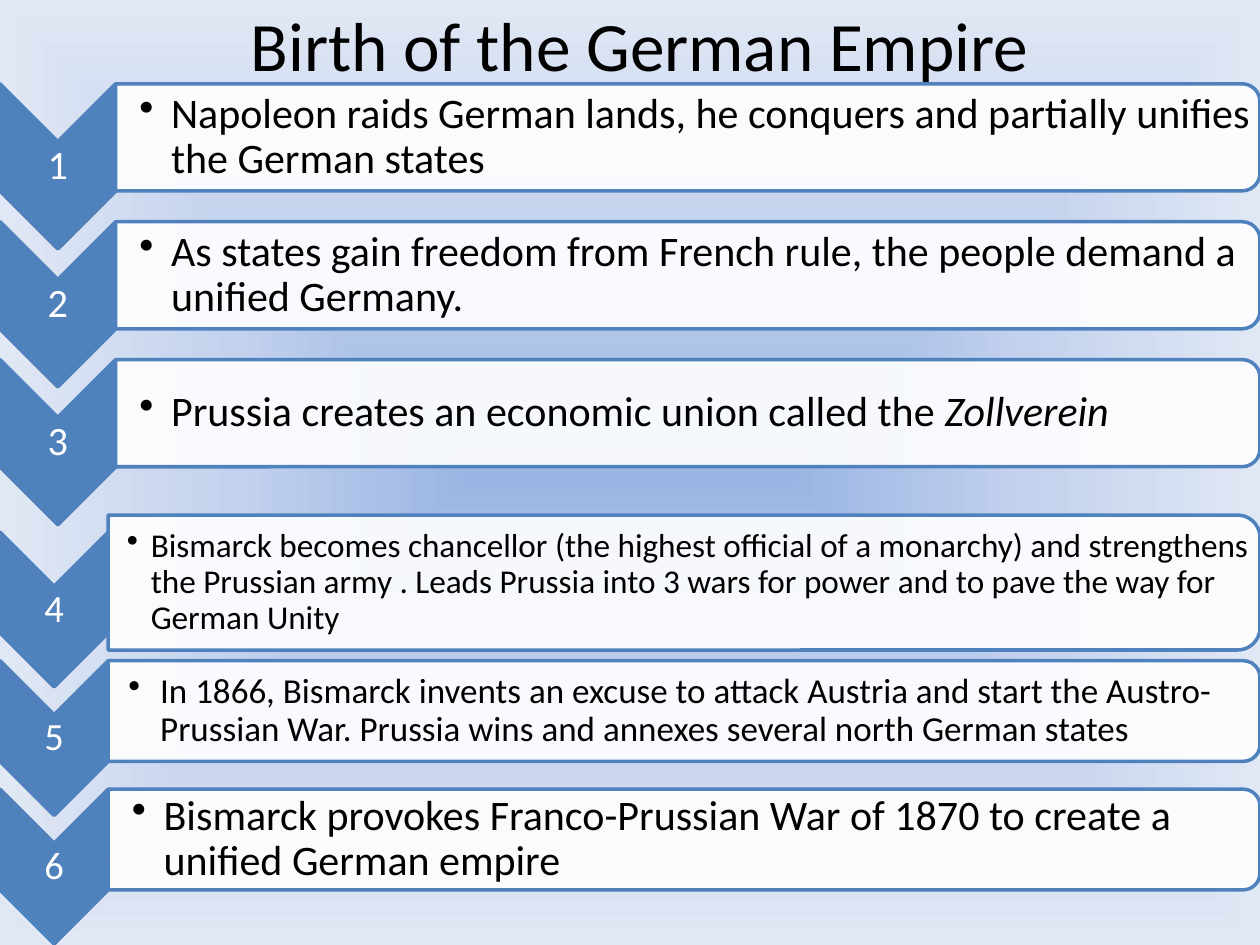
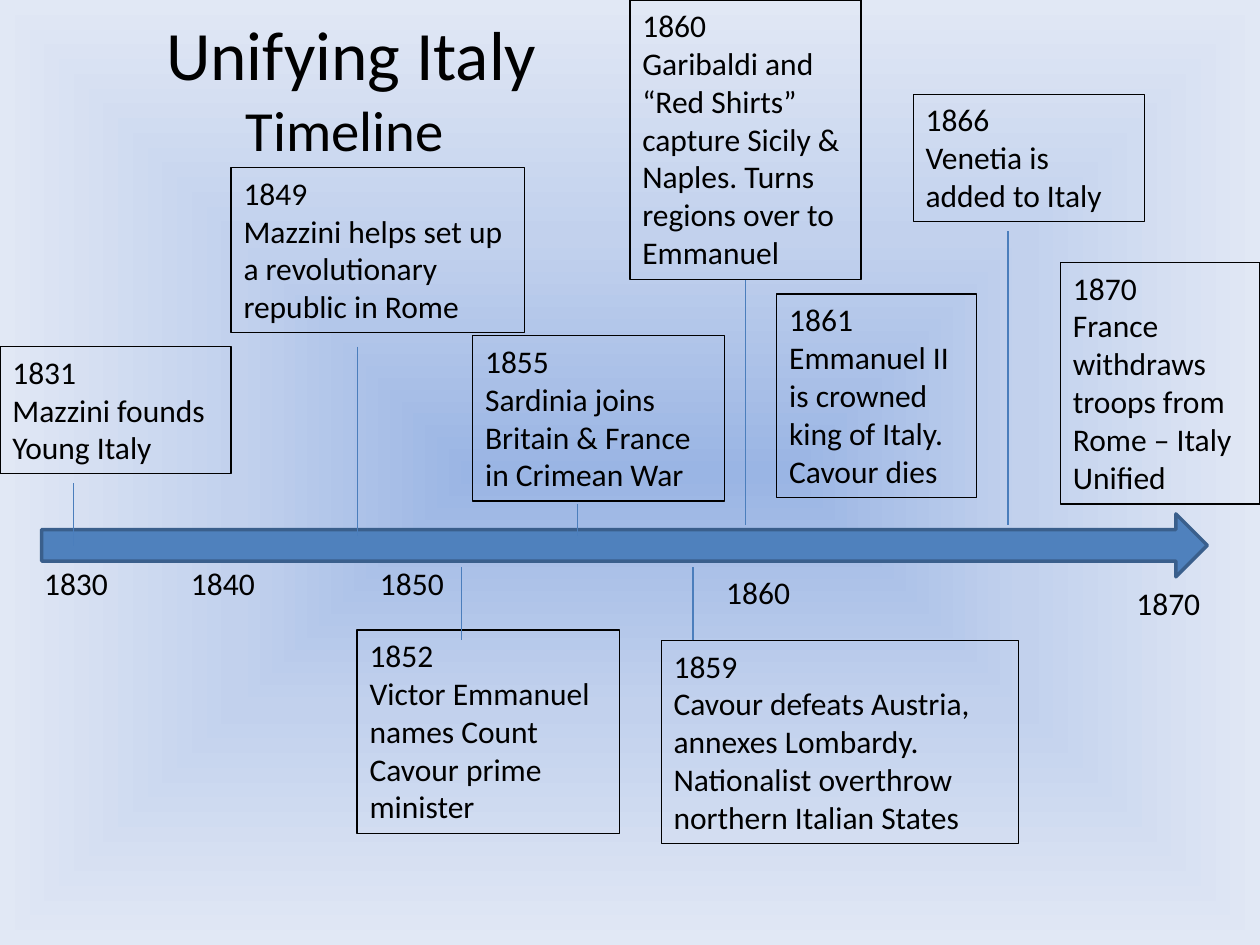
from dataclasses import dataclass
from typing import NamedTuple

from lxml.etree import SubElement
from pptx import Presentation
from pptx.dml.color import RGBColor
from pptx.enum.shapes import MSO_CONNECTOR, MSO_SHAPE
from pptx.enum.text import MSO_ANCHOR, PP_ALIGN
from pptx.oxml import parse_xml
from pptx.oxml.ns import nsdecls, qn
from pptx.util import Cm, Pt


@dataclass(frozen=True)
class Theme:
    font: str = "Calibri"
    ink: str = "000000"
    paper: str = "FFFFFF"
    blue: str = "4F81BD"
    edge: str = "3A5F8C"
    link: str = "4B7EBC"
    glow: tuple = ((0, "9AB5E4"), (50, "C2D1ED"), (100, "E1E8F5"))
    title: float = 39.6
    subtitle: float = 32.4
    body: float = 18
    thick: float = 2
    thin: float = 0.75


THEME = Theme()


class Box(NamedTuple):
    """A place on the slide, in centimetres."""
    left: float
    top: float
    width: float
    height: float

    def size(self) -> tuple:
        return tuple(Cm(n) for n in self)

    def turned(self) -> "Box":
        """The frame that covers this box after a quarter turn."""
        shift = (self.width - self.height) / 2
        return Box(self.left + shift, self.top - shift, self.height, self.width)


class Step(NamedTuple):
    text: str
    size: float = 24
    inset: float = 0.48
    indent: float = 0.64
    extra: float = 0  # height added to the panel
    accent: str = ""  # closing words in italics


class Stack(NamedTuple):
    """A column of chevrons, each with a panel to its right."""
    first: int
    top: float
    pitch: float
    width: float
    height: float
    panel: float
    digit: float
    steps: tuple


class Card(NamedTuple):
    year: str
    text: str
    left: float
    top: float
    width: float
    lines: int


class Stem(NamedTuple):
    left: float
    start: float
    end: float
    card: str = ""  # year of the card it hangs from


class Mark(NamedTuple):
    year: str
    left: float
    top: float


STACKS = (
    Stack(1, 1.69, 2.78, 2.33, 3.33, 2.16, 23, (
        Step("Napoleon raids German lands, he conquers and partially unifies "
             "the German states"),
        Step("As states gain freedom from French rule, the people demand a "
             "unified Germany."),
        Step("Prussia creates an economic union called the ",
             accent="Zollverein"),
    )),
    Stack(4, 10.73, 2.59, 2.18, 3.12, 2.03, 22, (
        Step("Bismarck becomes chancellor (the highest official of a monarchy) "
             "and strengthens the Prussian army . Leads Prussia into 3 wars "
             "for power and to pave the way for German Unity",
             19, 0.38, 0.48, 0.69),
        Step("In 1866, Bismarck invents an excuse to attack Austria and start "
             "the Austro-Prussian War. Prussia wins and annexes several north "
             "German states", 20, 0.41),
        Step("Bismarck provokes Franco-Prussian War of 1870 to create a "
             "unified German empire"),
    )),
)

CARDS = (
    Card("1831", "Mazzini founds Young Italy", 0, 6.99, 4.66, 3),
    Card("1849", "Mazzini helps set up a revolutionary republic in Rome",
         4.66, 3.38, 5.92, 4),
    Card("1852", "Victor Emmanuel names Count Cavour prime minister",
         7.2, 12.7, 5.29, 5),
    Card("1855", "Sardinia joins Britain & France in Crimean War",
         9.53, 6.77, 5.08, 4),
    Card("1859", "Cavour defeats Austria, annexes Lombardy. Nationalist "
         "overthrow northern Italian States", 13.33, 12.91, 7.2, 5),
    Card("1860", "Garibaldi and “Red Shirts” capture Sicily & Naples. Turns "
         "regions over to Emmanuel", 12.7, 0, 4.66, 7),
    Card("1861", "Emmanuel II is crowned king of Italy. Cavour dies",
         15.66, 5.93, 4.02, 5),
    Card("1866", "Venetia is added to Italy", 18.41, 1.9, 4.66, 3),
    Card("1870", "France withdraws troops from Rome – Italy Unified",
         21.38, 5.29, 4.02, 6),
)

STEMS = (
    Stem(1.48, 9.74, 11.01),
    Stem(7.2, 6.99, 10.8),
    Stem(9.31, 11.43, 12.91),
    Stem(11.64, 10.16, 10.8),
    Stem(13.97, 12.91, 11.43),
    Stem(15.03, 5.64, 10.58, "1860"),
    Stem(20.32, 4.66, 10.58),
)

MARKS = (
    Mark("1830", 0.64, 11.24),
    Mark("1840", 3.6, 11.24),
    Mark("1850", 7.41, 11.24),
    Mark("1860", 14.39, 11.43),
    Mark("1870", 22.66, 11.64),
)


def rgb(color: str) -> RGBColor:
    return RGBColor.from_string(color)


def add_page(deck):
    """Add a blank slide with the glowing background."""
    page = deck.slides.add_slide(deck.slide_layouts[6])
    stops = "".join(f'<a:gs pos="{at * 1000}"><a:srgbClr val="{color}"/></a:gs>'
                    for at, color in THEME.glow)
    page.element.cSld.insert(0, parse_xml(
        f'<p:bg {nsdecls("p", "a")}><p:bgPr><a:gradFill rotWithShape="1">'
        f'<a:gsLst>{stops}</a:gsLst><a:path path="shape">'
        '<a:fillToRect l="50000" t="50000" r="50000" b="50000"/></a:path>'
        '</a:gradFill><a:effectLst/></p:bgPr></p:bg>'))
    return page


def style(frame, size: float, color: str = THEME.ink, align=PP_ALIGN.LEFT) -> None:
    for para in frame.paragraphs:
        para.alignment = align
        for run in para.runs:
            font = run.font
            font.name, font.size = THEME.font, Pt(size)
            font.color.rgb = rgb(color)


def inset(frame, left: float, rest: float) -> None:
    frame.margin_left = Cm(left)
    frame.margin_top = frame.margin_right = frame.margin_bottom = Cm(rest)


def add_text(page, box: Box, text: str, anchor=MSO_ANCHOR.MIDDLE):
    frame = page.shapes.add_textbox(*box.size()).text_frame
    frame.word_wrap = True
    frame.vertical_anchor = anchor
    frame.text = text
    return frame


def add_title(page, box: Box, text: str):
    frame = add_text(page, box, text)
    style(frame, THEME.title, align=PP_ALIGN.CENTER)
    return frame


def add_form(page, kind, box: Box, fill: str = "", line: str = THEME.blue,
             weight: float = THEME.thick, turn: int = 0):
    form = page.shapes.add_shape(kind, *(box.turned() if turn else box).size())
    form.rotation = turn
    form.shadow.inherit = False
    if fill:
        form.fill.solid()
        form.fill.fore_color.rgb = rgb(fill)
    else:
        form.fill.background()
    form.line.color.rgb = rgb(line)
    form.line.width = Pt(weight)
    return form


def set_alpha(form, percent: int) -> None:
    color = form.fill._xPr.find(qn("a:solidFill"))[0]
    SubElement(color, qn("a:alpha")).set("val", str(percent * 1000))


def add_bullet(para, indent: float) -> None:
    props = para._p.get_or_add_pPr()
    props.set("marL", str(Cm(indent)))
    props.set("indent", str(-Cm(indent)))
    SubElement(props, qn("a:buChar")).set("char", "•")


def add_step(page, stack: Stack, row: int, step: Step) -> None:
    top = stack.top + row * stack.pitch
    wide = stack.width
    add_form(page, MSO_SHAPE.CHEVRON, Box(0, top, wide, stack.height),
             THEME.blue, turn=90)
    digit = add_text(page, Box(0, top + wide / 2, wide, stack.height - wide),
                     str(stack.first + row))
    inset(digit, 0.05, 0.05)
    digit.paragraphs[0].line_spacing = 0.9
    style(digit, stack.digit, THEME.paper, PP_ALIGN.CENTER)

    area = Box(wide, top - step.extra / 2, 25.4 - wide, stack.panel + step.extra)
    panel = add_form(page, MSO_SHAPE.ROUND_2_SAME_RECTANGLE, area,
                     THEME.paper, turn=90)
    set_alpha(panel, 90)
    pad = 0.1
    frame = add_text(page, Box(area.left, area.top + pad, area.width - pad,
                               area.height - 2 * pad), step.text)
    inset(frame, step.inset, 0.04)
    para = frame.paragraphs[0]
    para.line_spacing = 0.9
    if step.accent:
        run = para.add_run()
        run.text = step.accent
        run.font.italic = True
    style(frame, step.size)
    add_bullet(para, step.indent)


def add_card(page, card: Card):
    box = Box(card.left, card.top, card.width, 0.25 + 0.77 * card.lines)
    form = add_form(page, MSO_SHAPE.RECTANGLE, box, line=THEME.ink,
                    weight=THEME.thin)
    frame = form.text_frame
    frame.word_wrap = True
    frame.vertical_anchor = MSO_ANCHOR.TOP
    frame.text = f"{card.year}\n{card.text}"
    style(frame, THEME.body)
    return form


def add_stem(page, stem: Stem, forms: dict) -> None:
    line = page.shapes.add_connector(
        MSO_CONNECTOR.STRAIGHT, Cm(stem.left), Cm(stem.start),
        Cm(stem.left), Cm(stem.end))
    line.line.color.rgb = rgb(THEME.link)
    line.line.width = Pt(THEME.thin)
    SubElement(line._element.spPr, qn("a:effectLst"))
    if stem.card:
        line.begin_connect(forms[stem.card], 2)


def build_empire(deck) -> None:
    page = add_page(deck)
    add_title(page, Box(1.47, 0, 22.86, 1.78), "Birth of the German Empire")
    for stack in STACKS:
        for row, step in enumerate(stack.steps):
            add_step(page, stack, row, step)


def build_italy(deck) -> None:
    page = add_page(deck)
    title = add_title(page, Box(1.27, 0.76, 11.63, 1.98),
                      "Unifying Italy\vTimeline ")
    title.paragraphs[0].runs[1].font.size = Pt(THEME.subtitle)
    add_form(page, MSO_SHAPE.RIGHT_ARROW, Box(0.84, 10.36, 23.5, 1.27),
             THEME.blue, THEME.edge)
    for mark in MARKS:
        style(add_text(page, Box(mark.left, mark.top, 2.12, 1.06), mark.year,
                       MSO_ANCHOR.TOP), THEME.body)
    forms = {card.year: add_card(page, card) for card in CARDS}
    for stem in STEMS:
        add_stem(page, stem, forms)


def main() -> None:
    deck = Presentation()
    deck.slide_width, deck.slide_height = Cm(25.4), Cm(19.05)
    build_empire(deck)
    build_italy(deck)
    deck.save("out.pptx")


if __name__ == "__main__":
    main()
